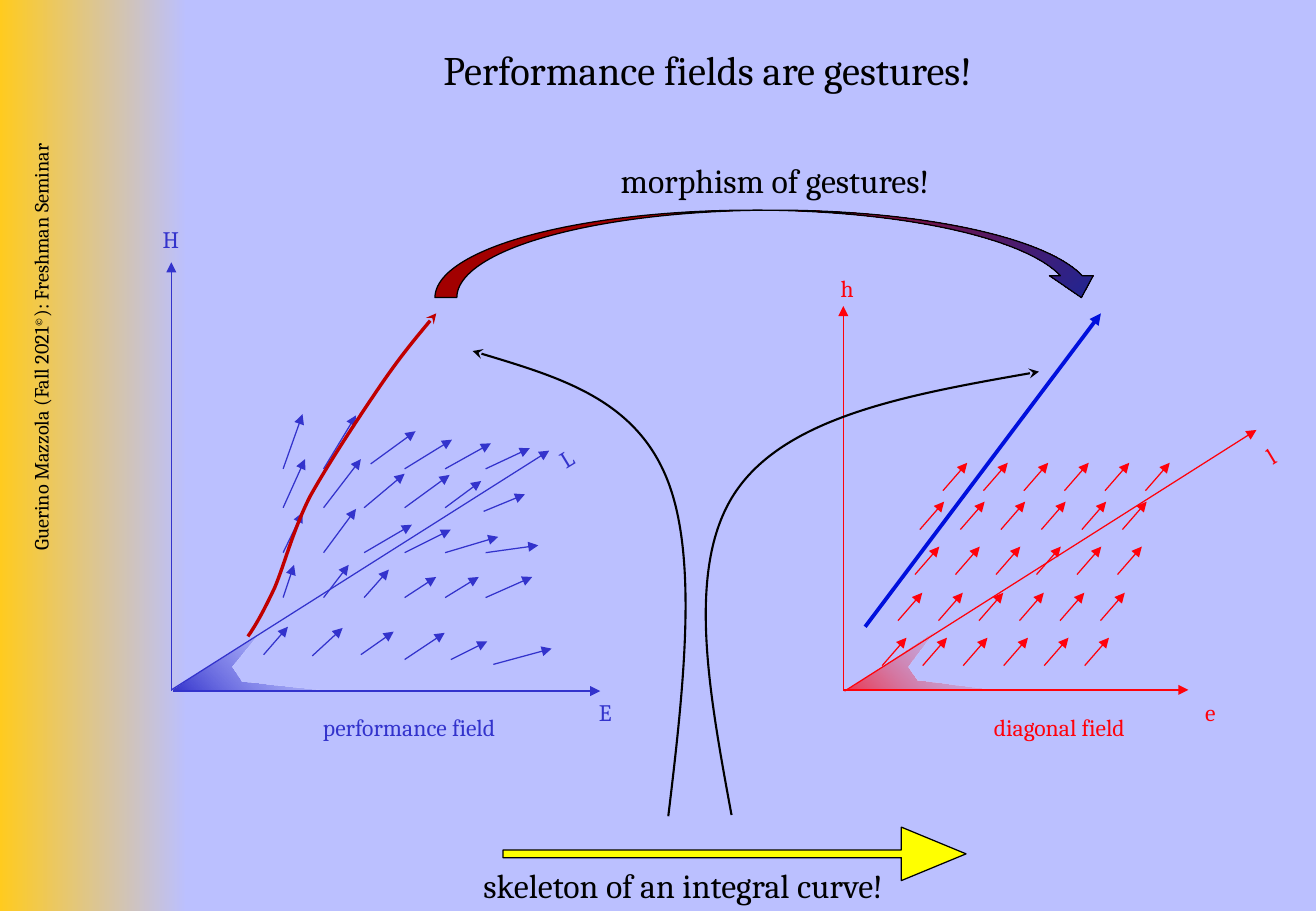
"""Build a slide on performance fields, shown as two vector fields joined by a morphism."""
from lxml import etree
from pptx import Presentation
from pptx.dml.color import RGBColor
from pptx.enum.shapes import MSO_CONNECTOR, MSO_SHAPE
from pptx.enum.text import MSO_AUTO_SIZE, PP_ALIGN
from pptx.oxml.ns import qn
from pptx.util import Cm, Pt

STRAIGHT = MSO_CONNECTOR.STRAIGHT
RECTANGLE, RIGHT_ARROW = MSO_SHAPE.RECTANGLE, MSO_SHAPE.RIGHT_ARROW
CURVED_ARROW = MSO_SHAPE.CURVED_DOWN_ARROW
FIT_SHAPE, ALIGN_RIGHT = MSO_AUTO_SIZE.SHAPE_TO_FIT_TEXT, PP_ALIGN.RIGHT
CM_PER_INCH = 2.54


class Theme:
    font = "Cambria"
    title, caption, label, footer = Pt(24), Pt(20), Pt(14), Pt(12)
    thin, curve, red_curve, thick = Pt(0.75), Pt(1.25), Pt(2), Pt(2.25)
    background = RGBColor.from_string("BBC0FF")
    gold = RGBColor.from_string("FFCB1F")
    black = RGBColor.from_string("000000")
    blue = RGBColor.from_string("3333CC")
    red = RGBColor.from_string("FF020B")
    dark_red = RGBColor.from_string("C00000")
    vivid_blue = RGBColor.from_string("0010DD")
    morph_start = RGBColor.from_string("CB0000")
    morph_end = RGBColor.from_string("24248F")
    yellow = RGBColor.from_string("FFFF00")


def at(*inches):
    """Turn slide positions in inches into lengths."""
    return [Cm(v * CM_PER_INCH) for v in inches]


def stroke(sp, color, width, end=None, arrow="triangle"):
    """Outline a shape without shadow, with an arrowhead at headEnd or tailEnd."""
    sp.line.color.rgb = color
    sp.line.width = width
    spPr = sp._element.spPr
    if end:
        etree.SubElement(spPr.find(qn("a:ln")), qn(f"a:{end}"), type=arrow)
    etree.SubElement(spPr, qn("a:effectLst"))


prs = Presentation()
prs.slide_width, prs.slide_height = at(10.83, 7.5)
s = prs.slides.add_slide(prs.slide_layouts[6])
s.background.fill.solid()
s.background.fill.fore_color.rgb = Theme.background

sidebar = s.shapes.add_shape(RECTANGLE, *at(0, 0, 1.54, 7.5))
sidebar.line.fill.background()
sidebar.shadow.inherit = False
gradients = [(sidebar, 0, [(0, Theme.gold, 100), (1, Theme.background, 100)])]

wedges = [
    (Theme.blue, 100, 28,
     [(1.41, 5.68), (2.64, 5.68), (1.99, 5.61), (1.91, 5.49), (2.14, 5.21)]),
    (Theme.red, 71, 19,
     [(6.97, 5.68), (8.19, 5.68), (7.55, 5.6), (7.47, 5.49), (7.69, 5.2)]),
]
for color, near_alpha, far_alpha, points in wedges:
    builder = s.shapes.build_freeform(*at(*points[0]))
    builder.add_line_segments([at(*pt) for pt in points[1:]])
    wedge = builder.convert_to_shape()
    wedge.line.fill.background()
    wedge.shadow.inherit = False
    gradients.append((wedge, 45, [(0, color, near_alpha),
                                  (1, Theme.background, far_alpha)]))

arrows = [
    (1.42, 5.69, 4.94, 5.69, Theme.blue, Theme.thin),
    (6.94, 5.68, 9.78, 5.68, Theme.red, Theme.thin),
    (1.41, 5.69, 1.41, 2.16, Theme.blue, Theme.thin),
    (6.94, 5.67, 6.94, 2.52, Theme.red, Theme.thin),
    (1.41, 5.68, 4.52, 3.71, Theme.blue, Theme.thin),
    (6.95, 5.69, 10.34, 3.54, Theme.red, Theme.thin),
    (7.12, 5.16, 9.06, 2.58, Theme.vivid_blue, Theme.thick),
]

COLUMN_GAP = 1 / 3
for x0, y in [(7.26, 5.48), (7.39, 5.11), (7.53, 4.73), (7.57, 4.36), (7.76, 4.04)]:
    for col in range(6):
        x = x0 + col * COLUMN_GAP
        arrows.append((x, y, x + 0.2, y - 0.23, Theme.red, Theme.thin))

performance_tips = {
    3.86: [(2.49, 3.41), (2.93, 3.42), (3.42, 3.55), (3.72, 3.62), (4.04, 3.65), (4.36, 3.69)],
    4.18: [(2.51, 3.78), (2.97, 3.78), (3.33, 3.9), (3.7, 3.91), (3.96, 3.96), (4.32, 4.07)],
    4.55: [(2.49, 4.22), (2.93, 4.19), (3.39, 4.32), (3.71, 4.36), (4.1, 4.42), (4.43, 4.49)],
    4.92: [(2.42, 4.65), (2.87, 4.65), (3.2, 4.69), (3.59, 4.75), (3.94, 4.75), (4.38, 4.75)],
    5.4: [(2.37, 5.16), (2.82, 5.17), (3.24, 5.2), (3.66, 5.21), (4.01, 5.28), (4.54, 5.34)],
}
off_grid_starts = {
    (3.86, 2): (3.05, 3.82), (4.18, 5): (3.98, 4.21),
    (5.4, 0): (2.17, 5.39), (5.4, 1): (2.57, 5.4), (5.4, 2): (2.97, 5.39),
    (5.4, 3): (3.33, 5.43), (5.4, 4): (3.71, 5.43), (5.4, 5): (4.06, 5.47),
}
for y, tips in performance_tips.items():
    for col, tip in enumerate(tips):
        start = off_grid_starts.get((y, col), (2.33 + col * COLUMN_GAP, y))
        arrows.append((*start, *tip, Theme.blue, Theme.thin))

for x1, y1, x2, y2, color, width in arrows:
    arrow = s.shapes.add_connector(STRAIGHT, *at(x1, y1, x2, y2))
    stroke(arrow, color, width, "tailEnd")

curves = [
    (Theme.dark_red, Theme.red_curve, "headEnd",
     [(3.59, 2.58), (3.44, 2.76), (3.29, 2.94), (3.12, 3.19), (2.95, 3.44),
      (2.7, 3.82), (2.55, 4.09), (2.41, 4.37), (2.34, 4.65), (2.26, 4.84),
      (2.17, 5.03), (2.11, 5.14), (2.04, 5.24)]),
    (Theme.black, Theme.curve, "tailEnd",
     [(5.5, 6.72), (5.63, 5.64), (5.75, 4.56), (5.48, 3.92),
      (5.21, 3.28), (4.55, 3.09), (3.89, 2.89)]),
    (Theme.black, Theme.curve, "tailEnd",
     [(6.02, 6.71), (5.83, 5.68), (5.64, 4.65), (6.06, 4.04),
      (6.48, 3.43), (7.52, 3.24), (8.55, 3.06)]),
]
for color, width, end, points in curves:
    builder = s.shapes.build_freeform(*at(*points[0]))
    builder.add_line_segments([at(*pt) for pt in points[1:]], close=False)
    curve = builder.convert_to_shape()
    curve.fill.background()
    stroke(curve, color, width, end, "stealth")
    outline = curve._element.spPr.find(".//" + qn("a:path"))
    segments = outline.findall(qn("a:lnTo"))
    for i in range(0, len(segments), 3):
        bezier = etree.SubElement(outline, qn("a:cubicBezTo"))
        for segment in segments[i:i + 3]:
            bezier.append(segment[0])
            outline.remove(segment)

morphism = s.shapes.add_shape(CURVED_ARROW, *at(3.58, 1.73, 5.5, 0.72))
gradients.append((morphism, 315, [(0.31, Theme.morph_start, 100),
                                  (0.97, Theme.morph_end, 100)]))
skeleton = s.shapes.add_shape(RIGHT_ARROW, *at(4.14, 6.81, 3.81, 0.44))
skeleton.adjustments[0], skeleton.adjustments[1] = 0.146, 1.209
skeleton.fill.solid()
skeleton.fill.fore_color.rgb = Theme.yellow
for sp in (morphism, skeleton):
    stroke(sp, Theme.black, Theme.thin)

for sp, angle, stops in gradients:
    sp.fill.gradient()
    sp.fill.gradient_angle = angle
    for stop, (position, color, alpha) in zip(sp.fill.gradient_stops, stops):
        stop.position = position
        stop.color.rgb = color
        if alpha < 100:
            rgb = stop._gs.find(qn("a:srgbClr"))
            etree.SubElement(rgb, qn("a:alpha"), val=str(alpha * 1000))

texts = [
    (["Guerino Mazzola (Fall 2021", "©", "): Freshman Seminar"],
     (-2.39, 3.66, 5.65, 0.5), 270, Theme.footer, Theme.black),
    (["Performance fields are gestures!"], (3.55, 0.32, 5.35, 0.57), 0, Theme.title, Theme.black),
    (["morphism of gestures!"], (5.01, 1.27, 2.75, 0.43), 0, Theme.caption, Theme.black),
    (["skeleton of an integral curve!"], (3.88, 7.07, 3.51, 0.44), 0, Theme.caption, Theme.black),
    (["performance field"], (2.56, 5.82, 1.76, 0.33), 0, Theme.label, Theme.blue),
    (["diagonal field"], (8.08, 5.82, 1.28, 0.33), 0, Theme.label, Theme.red),
    (["E"], (4.83, 5.7, 0.32, 0.33), 0, Theme.label, Theme.blue),
    (["H"], (1.24, 1.8, 0.34, 0.33), 0, Theme.label, Theme.blue),
    (["L"], (4.51, 3.6, 0.32, 0.33), 328.6, Theme.label, Theme.blue),
    (["e"], (9.82, 5.7, 0.29, 0.33), 0, Theme.label, Theme.red),
    (["h"], (6.82, 2.21, 0.3, 0.33), 0, Theme.label, Theme.red),
    (["l"], (10.33, 3.58, 0.26, 0.33), 329.1, Theme.label, Theme.red),
]
for runs, box, rotation, size, color in texts:
    sp = s.shapes.add_textbox(*at(*box))
    sp.rotation = rotation
    tf = sp.text_frame
    tf.word_wrap = box[2] > 1.5
    p = tf.paragraphs[0]
    p.font.name, p.font.size = Theme.font, size
    p.font.color.rgb = color
    for text in runs:
        r = p.add_run()
        r.text = text
        if text == "©":
            r._r.get_or_add_rPr().set("baseline", "30000")
    if size == Theme.footer:
        p.alignment = ALIGN_RIGHT
    else:
        tf.auto_size = FIT_SHAPE

prs.save("out.pptx")
